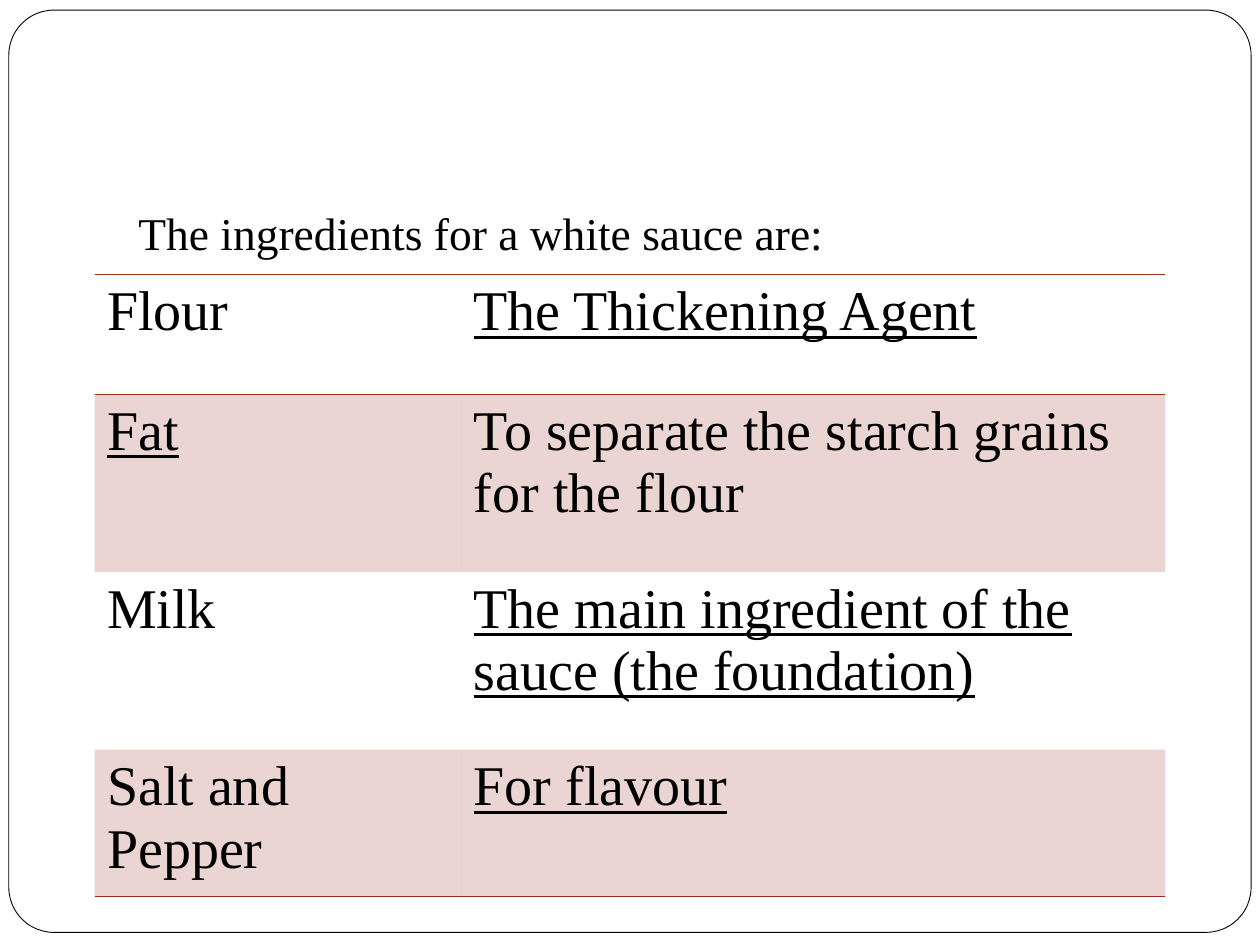
from lxml import etree
from pptx import Presentation
from pptx.dml.color import RGBColor
from pptx.enum import shapes
from pptx.oxml import ns
from pptx.util import Inches, Pt

BLACK = RGBColor(0x00, 0x00, 0x00)
WHITE = RGBColor(0xFF, 0xFF, 0xFF)
RUST = RGBColor(0x9B, 0x2D, 0x1F)
FONT = "Times New Roman"

COL_WIDTHS = (2.91, 5.59)
ROW_HEIGHTS = (0.95, 1.41, 1.41, 0.95)
# Each cell: wording, underlined
INGREDIENTS = (
    (("Flour", False), ("The Thickening Agent", True)),
    (("Fat", True), ("To separate the starch grains for the flour", False)),
    (("Milk", False),
     ("The main ingredient of the sauce (the foundation)", True)),
    (("Salt and Pepper", False), ("For flavour", True)),
)


def set_font(p, size, underline=False):
    f = p.font
    f.name, f.size, f.underline = FONT, Pt(size), underline
    f.color.rgb = BLACK


def add_frame(s, x, y, w, h):
    sp = s.shapes.add_shape(shapes.MSO_SHAPE.ROUNDED_RECTANGLE,
                            Inches(x), Inches(y), Inches(w), Inches(h))
    sp.adjustments[0] = 0.049
    sp.shadow.inherit = False
    sp.fill.solid()
    sp.fill.fore_color.rgb = WHITE
    sp.line.color.rgb = BLACK
    sp.line.width = Pt(0.5)


def add_intro(s, x, y, w, h):
    tf = s.shapes.add_textbox(Inches(x), Inches(y), Inches(w), Inches(h)).text_frame
    tf.word_wrap = True
    p = tf.paragraphs[0]
    p.text = "The ingredients for a white sauce are:"
    p.space_before = Pt(5.8)
    set_font(p, 26)


def set_borders(cell, ruled):
    """Rule the named sides (T, B) in rust and clear the other sides."""
    tc_pr = cell._tc.get_or_add_tcPr()
    for i, side in enumerate("LRTB"):
        ln = etree.Element(ns.qn(f"a:ln{side}"), w=str(Pt(1)))
        if side in ruled:
            fill = etree.SubElement(ln, ns.qn("a:solidFill"))
            etree.SubElement(fill, ns.qn("a:srgbClr"), val=str(RUST))
        else:
            etree.SubElement(ln, ns.qn("a:noFill"))
        tc_pr.insert(i, ln)


def set_band(cell, shaded):
    if not shaded:
        cell.fill.background()
        return
    cell.fill.solid()
    cell.fill.fore_color.rgb = RUST
    clr = cell._tc.tcPr.find(".//" + ns.qn("a:srgbClr"))
    etree.SubElement(clr, ns.qn("a:alpha"), val="20000")


def add_ingredients(s, x, y, w, h):
    table = s.shapes.add_table(len(INGREDIENTS), len(COL_WIDTHS), Inches(x),
                               Inches(y), Inches(w), Inches(h)).table
    table.first_row = table.horz_banding = False
    for col, width in zip(table.columns, COL_WIDTHS):
        col.width = Inches(width)
    last = len(INGREDIENTS) - 1
    rules = {0: "TB", 1: "T", last: "B"}
    for r, (row, height) in enumerate(zip(INGREDIENTS, ROW_HEIGHTS)):
        table.rows[r].height = Inches(height)
        for c, (wording, underline) in enumerate(row):
            cell = table.cell(r, c)
            cell.text = wording
            set_font(cell.text_frame.paragraphs[0], 32, underline)
            set_band(cell, r % 2 == 1)
            set_borders(cell, rules.get(r, ""))


def main():
    prs = Presentation()
    prs.slide_width, prs.slide_height = Inches(10), Inches(7.5)
    s = prs.slides.add_slide(prs.slide_layouts[6])
    add_frame(s, 0.07, 0.08, 9.86, 7.32)
    add_intro(s, 1, 1.58, 8.5, 5)
    add_ingredients(s, 0.75, 2.18, sum(COL_WIDTHS), sum(ROW_HEIGHTS))
    prs.save("out.pptx")


if __name__ == "__main__":
    main()
